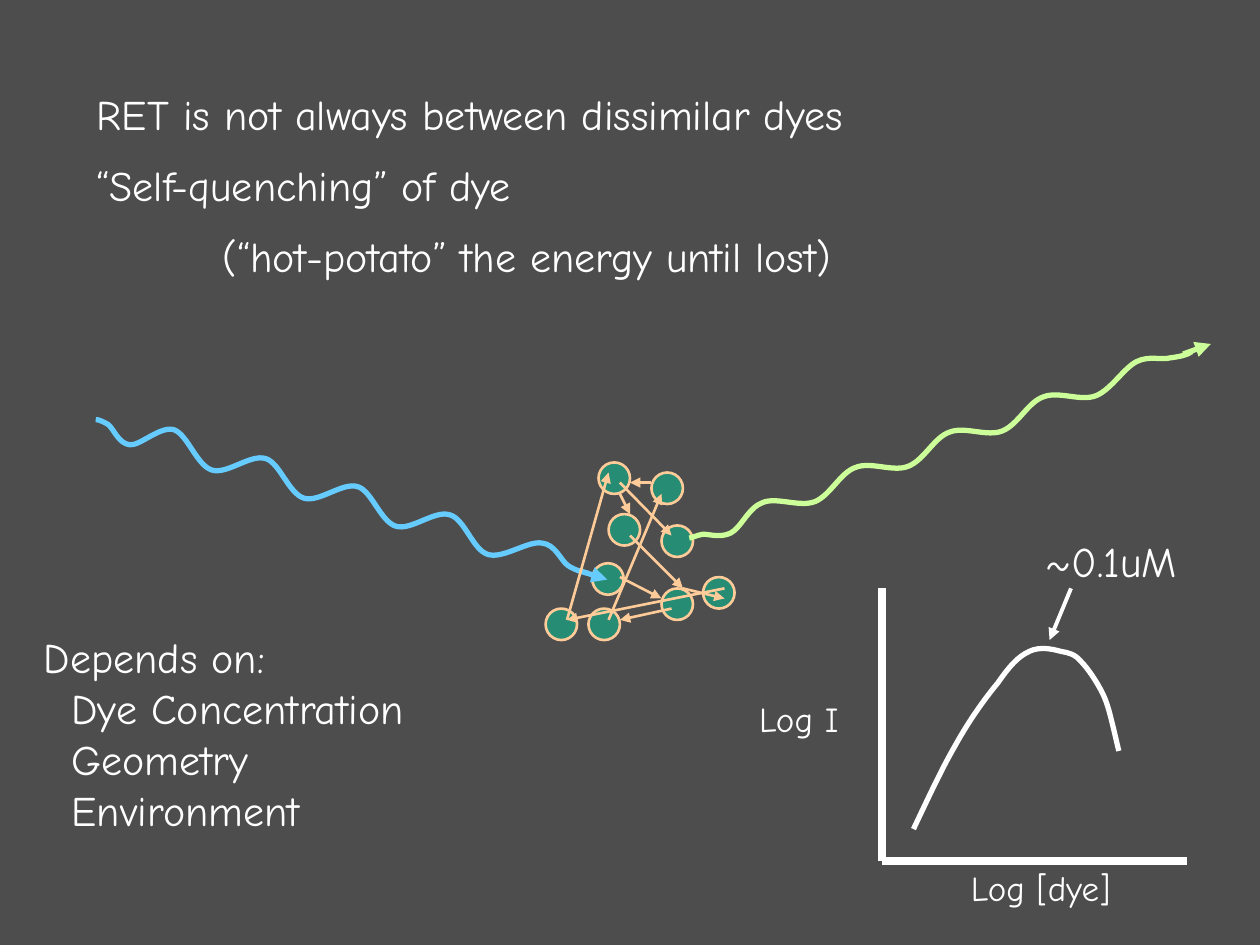
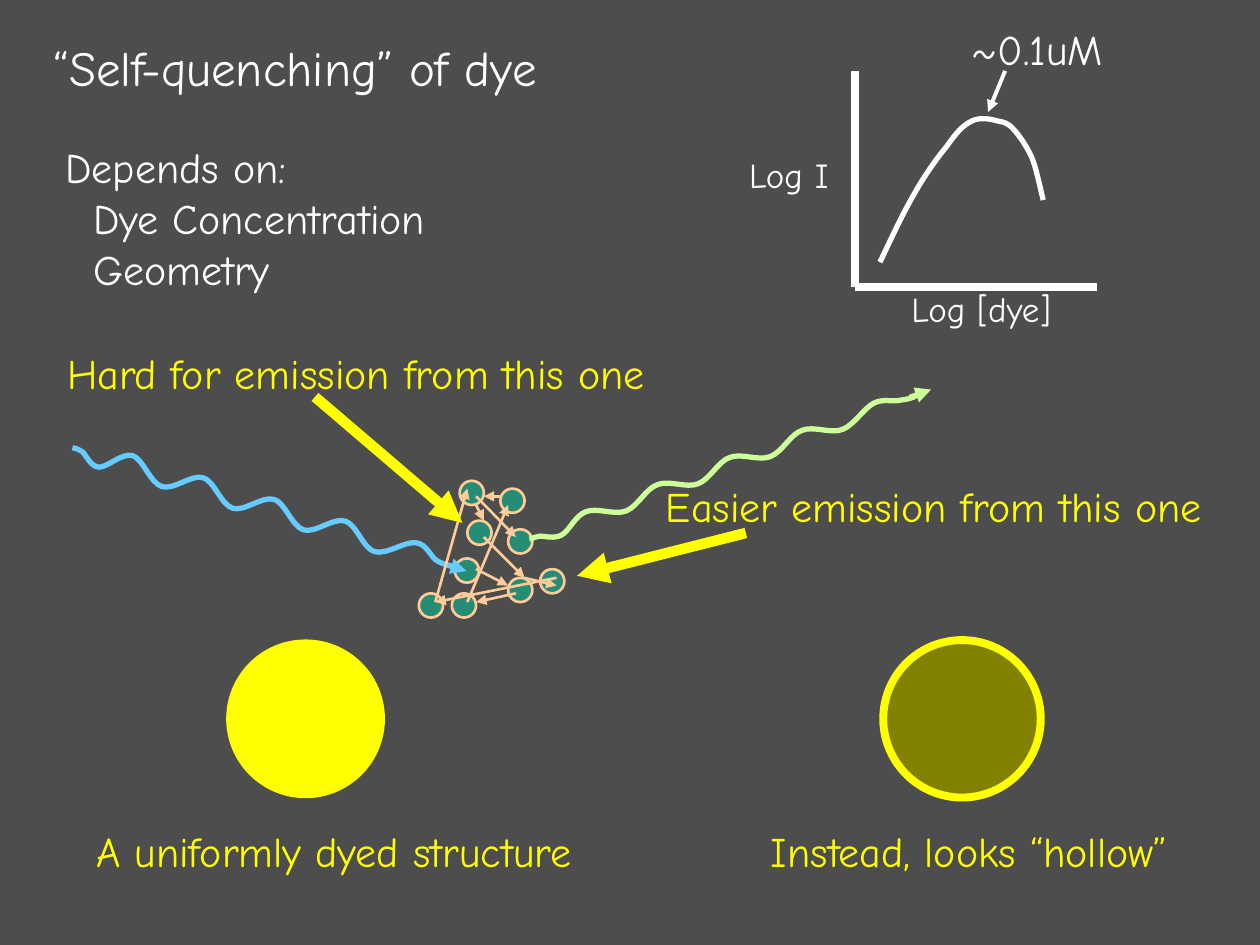
"""Build two slides on dye self-quenching, sharing one energy-hopping diagram and one graph."""
from lxml import etree
from pptx import Presentation
from pptx.dml.color import RGBColor
from pptx.enum.shapes import MSO_CONNECTOR, MSO_SHAPE
from pptx.enum.text import MSO_ANCHOR, PP_ALIGN
from pptx.oxml.ns import qn
from pptx.util import Pt

PX = 9144
STRAIGHT = MSO_CONNECTOR.STRAIGHT
OVAL = MSO_SHAPE.OVAL
MIDDLE, TOP = MSO_ANCHOR.MIDDLE, MSO_ANCHOR.TOP
LEFT, CENTER = PP_ALIGN.LEFT, PP_ALIGN.CENTER
FONT = "Comic Neue"
COLORS = {
    name: RGBColor.from_string(value)
    for name, value in {
        "background": "4D4D4D",
        "text": "FFFFFF",
        "dye": "00CC99",
        "hop": "FFCC99",
        "absorbed": "66CCFF",
        "emitted": "CCFF99",
        "highlight": "FFFF00",
        "dim": "828200",
    }.items()
}
UNSCALED = (1, 0, 0)


def add_line(slide, ends, color, width, arrow=True, transform=UNSCALED):
    """Draw a straight line between two points, with an arrowhead at its end if asked."""
    scale, dx, dy = transform
    x1, y1, x2, y2 = ends
    connector = slide.shapes.add_connector(
        STRAIGHT,
        round((x1 * scale + dx) * PX), round((y1 * scale + dy) * PX),
        round((x2 * scale + dx) * PX), round((y2 * scale + dy) * PX),
    )
    connector.line.color.rgb = COLORS[color]
    connector.line.width = Pt(width)
    if arrow:
        line = connector.line._get_or_add_ln()
        etree.SubElement(line, qn("a:tailEnd"), type="triangle")
    etree.SubElement(connector._element.spPr, qn("a:effectLst"))


def add_text(slide, box, lines, size=24, color="text", align=CENTER, anchor=MIDDLE, spacing=1.0):
    """Add a text box whose lines are (text, indent in px) pairs."""
    shape = slide.shapes.add_textbox(*(round(length * PX) for length in box))
    frame = shape.text_frame
    frame.word_wrap = align == LEFT
    frame.vertical_anchor = anchor
    frame.text = "\n".join(text for text, indent in lines)
    for index, (paragraph, (text, indent)) in enumerate(zip(frame.paragraphs, lines)):
        if indent:
            paragraph._p.get_or_add_pPr().set("marL", str(indent * PX))
        paragraph.alignment = align
        paragraph.line_spacing = spacing
        if index:
            paragraph.space_before = Pt(12)
        for run in paragraph.runs:
            run.font.name = FONT
            run.font.size = Pt(size)
            run.font.color.rgb = COLORS[color]


absorbed_wave = [
    (76, 333), (78, 333), (81, 334), (86, 337), (90, 340), (94, 352), (103, 353),
    (111, 354), (127, 338), (138, 341),
]
absorbed_period = [(149, 345), (156, 369), (168, 373), (180, 377), (199, 360), (211, 364)]
absorbed_end = [
    (369, 412), (375, 436), (387, 440), (399, 444), (419, 429), (430, 431),
    (441, 432), (445, 445), (451, 449), (457, 453), (463, 454), (467, 455),
]
emitted_wave = [
    (547, 427), (549, 427), (552, 425), (558, 424), (563, 424), (572, 427), (580, 423),
    (588, 419), (594, 403), (605, 399), (616, 394), (635, 403), (647, 398),
]
emitted_period = [(659, 393), (667, 375), (679, 371), (691, 366), (709, 375), (721, 370)]
emitted_end = [
    (882, 309), (892, 292), (902, 287), (912, 282), (921, 286), (929, 284),
    (936, 283), (942, 282), (946, 279),
]
for cycle in range(3):
    absorbed_wave += [(x + 73 * cycle, y + 22.3 * cycle) for x, y in absorbed_period]
    emitted_wave += [(x + 74.5 * cycle, y - 28 * cycle) for x, y in emitted_period]
absorbed_wave += absorbed_end
emitted_wave += emitted_end

intensity_curve = [
    (725, 658), (736, 635), (747, 611), (758, 592), (769, 572), (782, 554), (792, 542),
    (801, 529), (808, 521), (817, 517), (825, 513), (835, 515), (842, 517),
    (848, 518), (853, 519), (858, 525), (864, 531), (871, 542), (875, 550),
    (879, 558), (881, 567), (883, 575), (885, 583), (887, 592), (888, 596),
]
wave_tips = [("absorbed", (460, 453, 482, 460)), ("emitted", (939, 281, 961, 273))]
dyes = [
    (470, 447), (525, 467), (525, 417), (467, 483), (483, 408),
    (433, 483), (558, 458), (517, 375), (475, 367),
]
hops = [
    (492, 458, 525, 475), (533, 483, 492, 492), (483, 492, 525, 392), (517, 383, 500, 383),
    (492, 392, 500, 408), (500, 425, 542, 467), (542, 467, 575, 475), (575, 467, 450, 492),
    (450, 492, 483, 375), (492, 383, 533, 425),
]
axes = [(700, 467, 700, 683), (942, 683, 700, 683)]
graph_labels = [
    ("Log [dye]", 826, 704, 140, 49, 20),
    ("Log I", 634, 570, 88, 49, 20),
    ("~0.1uM", 882, 445, 131, 57, 24),
]
factors = [("Depends on:", 0), ("Dye Concentration", 22), ("Geometry", 22), ("Environment", 22)]
pages = [
    {
        "heading": [
            ("RET is not always between dissimilar dyes", 0),
            ("“Self-quenching” of dye", 0),
            ("(“hot-potato” the energy until lost)", 100),
        ],
        "heading_box": (67, 65, 825, 216),
        "heading_size": 24,
        "heading_anchor": TOP,
        "factors": factors,
        "factors_box": (25, 492, 474, 192),
        "diagram": UNSCALED,
        "graph": UNSCALED,
    },
    {
        "heading": [("“Self-quenching” of dye", 0)],
        "heading_box": (33, 21, 825, 64),
        "heading_size": 28,
        "heading_anchor": MIDDLE,
        "factors": factors[:3],
        "factors_box": (42, 109, 474, 140),
        "diagram": (0.77, -1, 99),
        "graph": (0.795, 122, -315),
    },
]

presentation = Presentation()
presentation.slide_width = 1000 * PX
presentation.slide_height = 750 * PX

for page in pages:
    slide = presentation.slides.add_slide(presentation.slide_layouts[6])
    slide.background.fill.solid()
    slide.background.fill.fore_color.rgb = COLORS["background"]
    add_text(slide, page["heading_box"], page["heading"], page["heading_size"],
             align=LEFT, anchor=page["heading_anchor"])
    add_text(slide, page["factors_box"], page["factors"], align=LEFT, spacing=0.6)

    scale, dx, dy = page["diagram"]
    for x, y in dyes:
        dye = slide.shapes.add_shape(
            OVAL, round((x * scale + dx) * PX), round((y * scale + dy) * PX),
            round(25 * scale * PX), round(25 * scale * PX),
        )
        dye.shadow.inherit = False
        dye.fill.solid()
        dye.fill.fore_color.rgb = COLORS["dye"]
        fill_color = dye._element.spPr.find(qn("a:solidFill")).find(qn("a:srgbClr"))
        etree.SubElement(fill_color, qn("a:alpha"), val="50000")
        dye.line.color.rgb = COLORS["hop"]
        dye.line.width = Pt(1.5)

    for nodes, color, transform in [
        (absorbed_wave, "absorbed", page["diagram"]),
        (emitted_wave, "emitted", page["diagram"]),
        (intensity_curve, "text", page["graph"]),
    ]:
        scale, dx, dy = transform
        nodes = [((x * scale + dx) * PX, (y * scale + dy) * PX) for x, y in nodes]
        builder = slide.shapes.build_freeform(*nodes[0])
        builder.add_line_segments(nodes[1:], close=False)
        shape = builder.convert_to_shape()
        segments = list(shape._element.spPr.iter(qn("a:lnTo")))
        for first in range(0, len(segments), 3):
            bezier = etree.SubElement(segments[first].getparent(), qn("a:cubicBezTo"))
            for segment in segments[first:first + 3]:
                bezier.append(segment[0])
                segment.getparent().remove(segment)
        shape.shadow.inherit = False
        shape.fill.background()
        shape.line.color.rgb = COLORS[color]
        shape.line.width = Pt(3)

    for color, ends in wave_tips:
        add_line(slide, ends, color, 3, transform=page["diagram"])
    for ends in hops:
        add_line(slide, ends, "hop", 1.5, transform=page["diagram"])
    for ends in axes:
        add_line(slide, ends, "text", 4.5, arrow=False, transform=page["graph"])
    add_line(slide, (850, 467, 833, 508), "text", 2.25, transform=page["graph"])
    scale, dx, dy = page["graph"]
    for text, x, y, width, height, size in graph_labels:
        box = (x * scale + dx - width / 2, y * scale + dy - height / 2, width, height)
        add_text(slide, box, [(text, 0)], size)

for ends in [(250, 315, 367, 415), (592, 423, 458, 457)]:
    add_line(slide, ends, "highlight", 6)

for x, fill, line_width in [(180, "highlight", 0.75), (701, "dim", 4.5)]:
    structure = slide.shapes.add_shape(OVAL, x * PX, 508 * PX, 125 * PX, 125 * PX)
    structure.shadow.inherit = False
    structure.fill.solid()
    structure.fill.fore_color.rgb = COLORS[fill]
    structure.line.color.rgb = COLORS["highlight"]
    structure.line.width = Pt(line_width)

for text, x, y, width in [
    ("Hard for emission from this one", 23, 267, 519),
    ("Easier emission from this one", 502, 373, 478),
    ("A uniformly dyed structure", 42, 647, 446),
    ("Instead, looks “hollow”", 583, 647, 372),
]:
    add_text(slide, (x, y, width, 57), [(text, 0)], color="highlight")

presentation.save("out.pptx")
